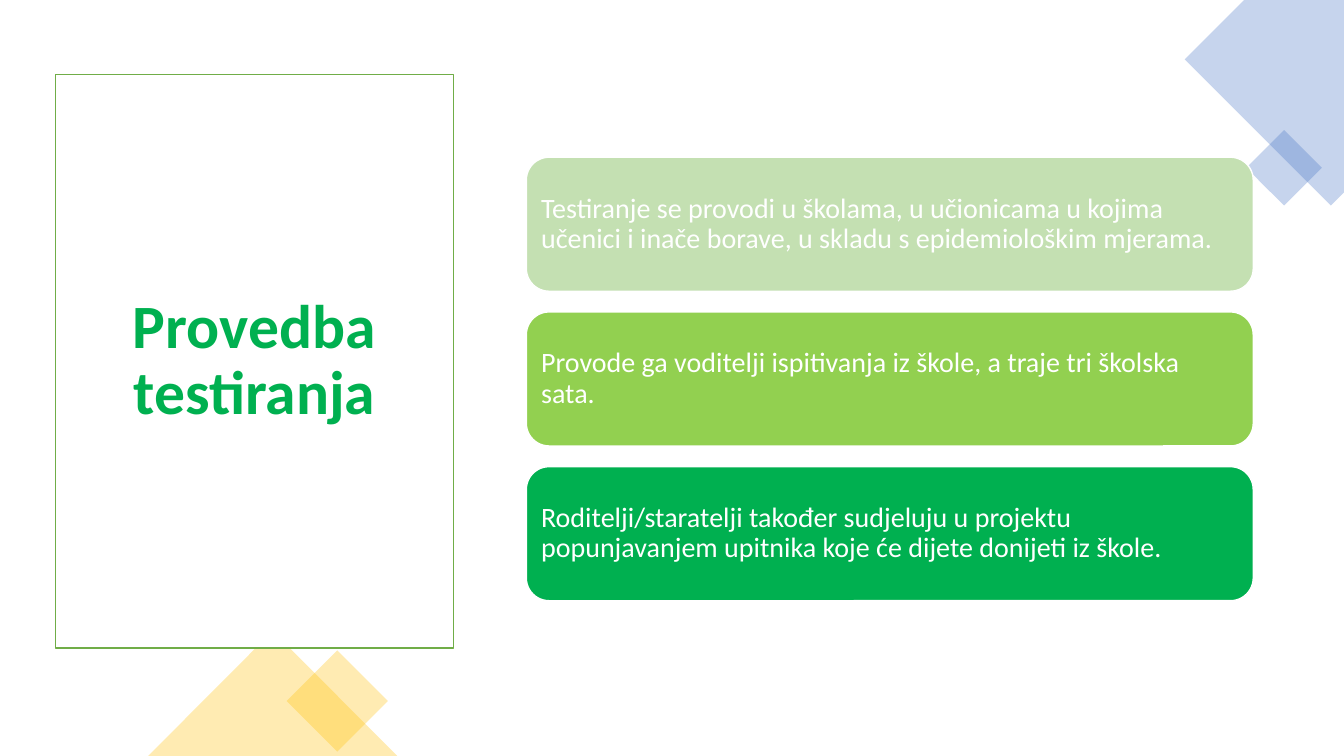
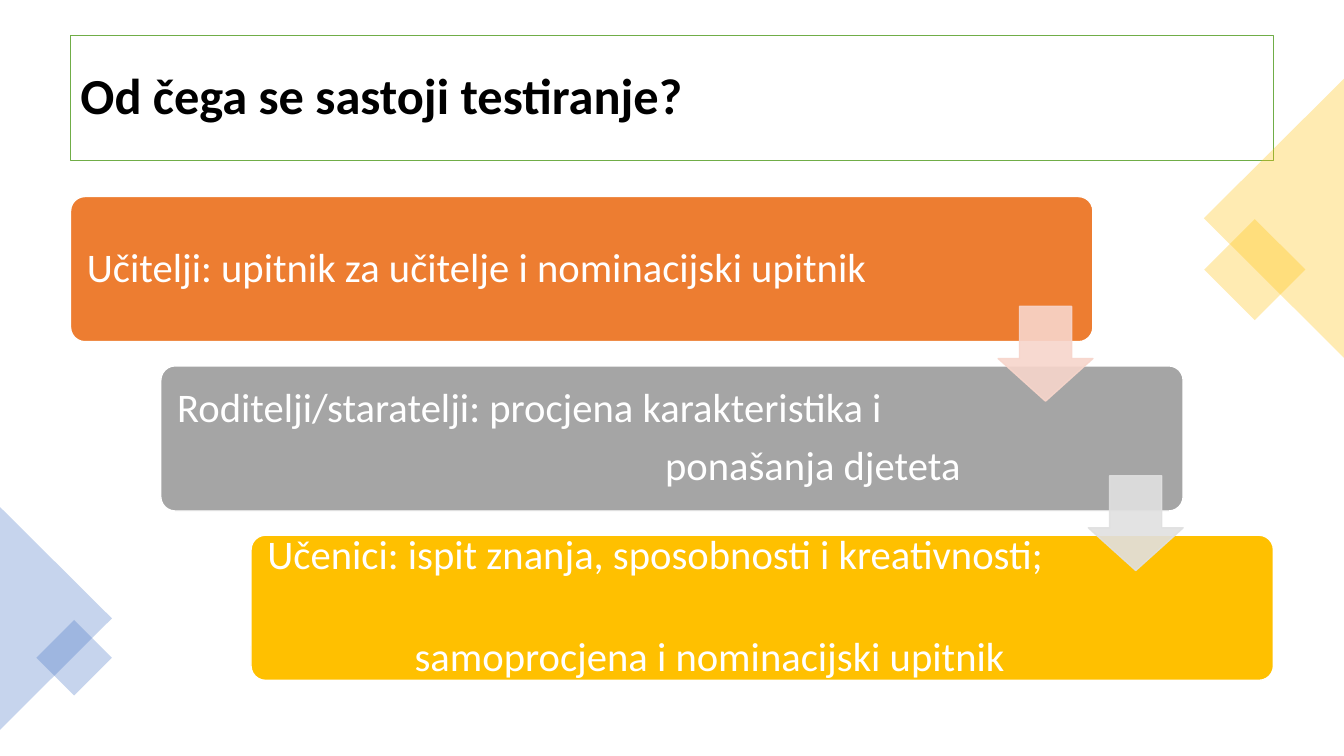
from lxml import etree
from pptx import Presentation
from pptx.dml.color import RGBColor
from pptx.enum.shapes import MSO_SHAPE
from pptx.enum.text import MSO_ANCHOR, PP_ALIGN
from pptx.oxml.ns import qn
from pptx.util import Inches, Pt

RECTANGLE = MSO_SHAPE.RECTANGLE
ROUNDED = MSO_SHAPE.ROUNDED_RECTANGLE
TRIANGLE = MSO_SHAPE.ISOSCELES_TRIANGLE
DOWN_ARROW = MSO_SHAPE.DOWN_ARROW
MIDDLE = MSO_ANCHOR.MIDDLE
LEFT, CENTER = PP_ALIGN.LEFT, PP_ALIGN.CENTER

COLORS = {
    "white": "FFFFFF", "black": "000000", "frame": "70AD47",
    "pale_green": "C4E0B2", "lime": "92D050", "green": "00B050",
    "orange": "ED7D31", "gray": "A5A5A5", "gold": "FFC000", "blue": "4472C4",
    "pale_orange": "F7D5CB", "pale_gray": "E0E0E0",
}
FONT = "Calibri"
DECOR_OPACITY = 30
ARROW_OPACITY = 90

PROCEDURE = {
    "title": "Provedba testiranja",
    "title_box": (0.55, 0.74, 3.95, 5.69),
    "title_format": {"size": 44, "color": "green", "align": CENTER},
    "outline": ("blue", [(13.33, 0), (12.34, 0), (11.75, 0.59), (13.2, 2.04), (13.33, 1.91)]),
    "decor": [
        (RECTANGLE, (12.47, 1.4, 0.53, 0.53), 45, "blue"),
        (RECTANGLE, (2.99, 6.6, 0.71, 0.71), 45, "gold"),
        (TRIANGLE, (1.47, 6.26, 2.47, 1.24), 0, "gold"),
    ],
    "cards": [
        ("pale_green", [("Testiranje se provodi u školama, u učionicama u kojima učenici i inače "
                         "borave, u skladu s epidemiološkim mjerama.", 0, 0)]),
        ("lime", [("Provode ga voditelji ispitivanja iz škole, a traje tri školska sata.", 0, 0)]),
        ("green", [("Roditelji/staratelji također sudjeluju u projektu popunjavanjem upitnika "
                    "koje će dijete donijeti iz škole.", 0, 0)]),
    ],
    "first_card": (5.22, 1.56, 7.21, 1.33),
    "last_corner": (5.22, 4.63),
    "card_format": {"size": 20, "inset": 0.08, "radius": 0.17},
    "arrows": [],
}
CONTENTS = {
    "title": "Od čega se sastoji testiranje?",
    "title_box": (0.7, 0.35, 11.93, 1.24),
    "title_format": {"size": 36, "color": "black", "align": LEFT},
    "outline": None,
    "decor": [
        (RECTANGLE, (12.09, 2.32, 0.71, 0.71), 45, "gold"),
        (TRIANGLE, (11.25, 1.47, 2.77, 1.39), 270, "gold"),
        (TRIANGLE, (-0.55, 5.58, 2.21, 1.11), 90, "blue"),
        (RECTANGLE, (0.47, 6.26, 0.53, 0.53), 45, "blue"),
    ],
    "cards": [
        ("orange", [("Učitelji: upitnik za učitelje i nominacijski upitnik", 0, 0)]),
        ("gray", [("Roditelji/staratelji: procjena karakteristika i", 0, 0),
                  ("ponašanja djeteta", 4.84, 10.2)]),
        ("gold", [("Učenici: ispit znanja, sposobnosti i kreativnosti;", 0, 0),
                  ("samoprocjena i nominacijski upitnik", 1.46, 41.5)]),
    ],
    "first_card": (0.7, 1.95, 10.14, 1.44),
    "last_corner": (2.49, 5.31),
    "card_format": {"size": 29, "inset": 0.12, "radius": 0.1},
    "arrows": ["pale_orange", "pale_gray"],
}
ARROW_SIZE = 0.94
ARROW_DROP = 1.09


def rgb(name):
    return RGBColor.from_string(COLORS[name])


def paint(shape, fill, line=None, opacity=100):
    shape.shadow.inherit = False
    shape.fill.solid()
    shape.fill.fore_color.rgb = rgb(fill)
    if line:
        shape.line.color.rgb = rgb(line)
        shape.line.width = Pt(1)
    else:
        shape.line.fill.background()
    if opacity < 100:
        for color in shape.element.spPr.iter(qn("a:srgbClr")):
            etree.SubElement(color, qn("a:alpha"), val=str(opacity * 1000))


def add_shape(page, kind, place, fill, line=None, opacity=100):
    shape = page.shapes.add_shape(kind, *map(Inches, place))
    paint(shape, fill, line, opacity)
    return shape


def write(shape, lines, size, color, margins, align=LEFT, bold=False):
    frame = shape.text_frame
    frame.word_wrap = True
    frame.vertical_anchor = MIDDLE
    for side, margin in zip(("left", "top", "right", "bottom"), margins):
        setattr(frame, f"margin_{side}", Inches(margin))
    for index, (text, indent, space) in enumerate(lines):
        para = frame.paragraphs[0] if index == 0 else frame.add_paragraph()
        para_format = {"alignment": align, "line_spacing": 0.9, "space_before": Pt(space)}
        for name, value in para_format.items():
            setattr(para, name, value)
        if indent:
            para._p.get_or_add_pPr().set("marL", str(Inches(indent)))
        span = para.add_run()
        span.text = text
        for name, value in {"name": FONT, "size": Pt(size), "bold": bold}.items():
            setattr(span.font, name, value)
        span.font.color.rgb = rgb(color)


def add_decor(page, content):
    if content["outline"]:
        color, points = content["outline"]
        corners = [(Inches(x), Inches(y)) for x, y in points]
        builder = page.shapes.build_freeform(*corners[0])
        builder.add_line_segments(corners[1:], close=True)
        paint(builder.convert_to_shape(), color, opacity=DECOR_OPACITY)
    for kind, place, rotation, color in content["decor"]:
        add_shape(page, kind, place, color, opacity=DECOR_OPACITY).rotation = rotation


def add_title(page, content):
    box = add_shape(page, RECTANGLE, content["title_box"], "white", "frame")
    write(box, [(content["title"], 0, 0)], margins=(0.1, 0.05, 0.1, 0.05), bold=True,
          **content["title_format"])


def add_cards(page, content):
    left, top, width, height = content["first_card"]
    last_left, last_top = content["last_corner"]
    style = content["card_format"]
    steps = len(content["cards"]) - 1
    corners = [(left + (last_left - left) * index / steps, top + (last_top - top) * index / steps)
               for index in range(steps + 1)]
    for (x, y), (color, lines) in zip(corners, content["cards"]):
        card = add_shape(page, ROUNDED, (x, y, width, height), color, "white")
        card.adjustments[0] = style["radius"]
        write(card, lines, style["size"], "white", [style["inset"]] * 4)
    for (x, y), color in zip(corners, content["arrows"]):
        place = (x + width - ARROW_SIZE, y + ARROW_DROP, ARROW_SIZE, ARROW_SIZE)
        arrow = add_shape(page, DOWN_ARROW, place, color, color, ARROW_OPACITY)
        arrow.adjustments[0] = 0.55
        arrow.adjustments[1] = 0.45


def main():
    deck = Presentation()
    deck.slide_width, deck.slide_height = Inches(13.33), Inches(7.5)
    for content in (PROCEDURE, CONTENTS):
        page = deck.slides.add_slide(deck.slide_layouts[6])
        if content["arrows"]:
            add_title(page, content)
            add_decor(page, content)
        else:
            add_decor(page, content)
            add_title(page, content)
        add_cards(page, content)
    deck.save("out.pptx")


if __name__ == "__main__":
    main()
